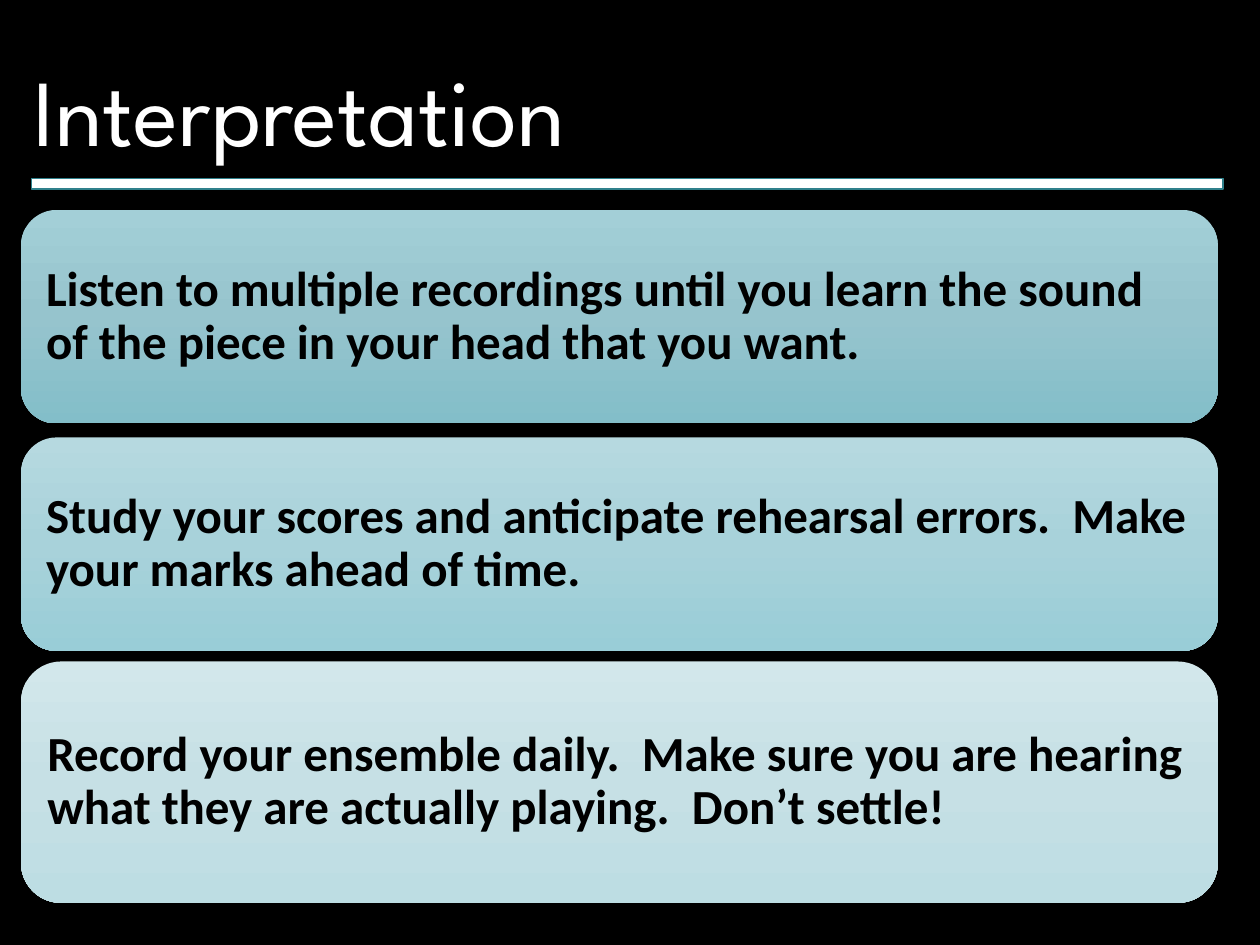
from copy import deepcopy

from pptx import Presentation
from pptx.dml.color import RGBColor
from pptx.enum.shapes import MSO_SHAPE
from pptx.enum.text import MSO_ANCHOR, PP_ALIGN
from pptx.oxml.ns import qn
from pptx.util import Pt

BLACK = RGBColor(0x00, 0x00, 0x00)
WHITE = RGBColor(0xFF, 0xFF, 0xFF)
TEAL = RGBColor(0x30, 0x81, 0x8C)
DEEP = (RGBColor(0xA3, 0xCF, 0xD7), RGBColor(0x96, 0xC4, 0xCD), RGBColor(0x83, 0xBE, 0xC9))
MID = (RGBColor(0xB6, 0xD9, 0xE0), RGBColor(0xA8, 0xD2, 0xDA), RGBColor(0x99, 0xCD, 0xD7))
PALE = (RGBColor(0xD2, 0xE7, 0xEB), RGBColor(0xC6, 0xE0, 0xE5), RGBColor(0xBD, 0xDD, 0xE3))

# Top, height, shades and text of each card
CARDS = [
    (120, 122, DEEP, "Listen to multiple recordings until you learn the sound "
                     "of the piece in your head that you want."),
    (250, 122, MID, "Study your scores and anticipate rehearsal errors.  "
                    "Make your marks ahead of time."),
    (378, 138, PALE, "Record your ensemble daily.  Make sure you are hearing "
                     "what they are actually playing.  Don’t settle!"),
]


def write(frame, text, font, size, color, bold=False):
    frame.word_wrap = True
    frame.vertical_anchor = MSO_ANCHOR.MIDDLE
    para = frame.paragraphs[0]
    para.alignment = PP_ALIGN.LEFT
    para.line_spacing = 0.9
    run = para.add_run()
    run.text = text
    run.font.name = font
    run.font.size = Pt(size)
    run.font.bold = bold
    run.font.color.rgb = color


def shade(shape, colors):
    shape.fill.gradient()
    shape.fill.gradient_angle = 270
    # The default gradient has two stops; add one between them
    stops = next(shape.element.iter(qn("a:gsLst")))
    stops.insert(1, deepcopy(stops[0]))
    for stop, color, place in zip(shape.fill.gradient_stops, colors, (0, 0.5, 1)):
        stop.color.rgb = color
        stop.position = place


def add_title(slide, text):
    box = slide.shapes.add_textbox(Pt(12), Pt(18), Pt(696), Pt(96))
    write(box.text_frame, text, "League Spartan", 54, WHITE)


def add_card(slide, top, height, colors, text):
    card = slide.shapes.add_shape(
        MSO_SHAPE.ROUNDED_RECTANGLE, Pt(12), Pt(top), Pt(684), Pt(height))
    card.shadow.inherit = False
    card.line.fill.background()
    shade(card, colors)
    frame = card.text_frame
    frame.margin_left = frame.margin_right = Pt(8.4)
    frame.margin_top = frame.margin_bottom = Pt(8.4)
    write(frame, text, "Calibri", 28, BLACK, bold=True)


def add_rule(slide):
    rule = slide.shapes.add_shape(
        MSO_SHAPE.RECTANGLE, Pt(18), Pt(102), Pt(681), Pt(6))
    rule.shadow.inherit = False
    rule.fill.solid()
    rule.fill.fore_color.rgb = WHITE
    rule.line.color.rgb = TEAL
    rule.line.width = Pt(1)


def main():
    deck = Presentation()
    deck.slide_width, deck.slide_height = Pt(720), Pt(540)
    slide = deck.slides.add_slide(deck.slide_layouts[6])
    slide.background.fill.solid()
    slide.background.fill.fore_color.rgb = BLACK

    # Title, cards, then the rule under the title
    add_title(slide, "Interpretation")
    for card in CARDS:
        add_card(slide, *card)
    add_rule(slide)
    deck.save("out.pptx")


if __name__ == "__main__":
    main()
